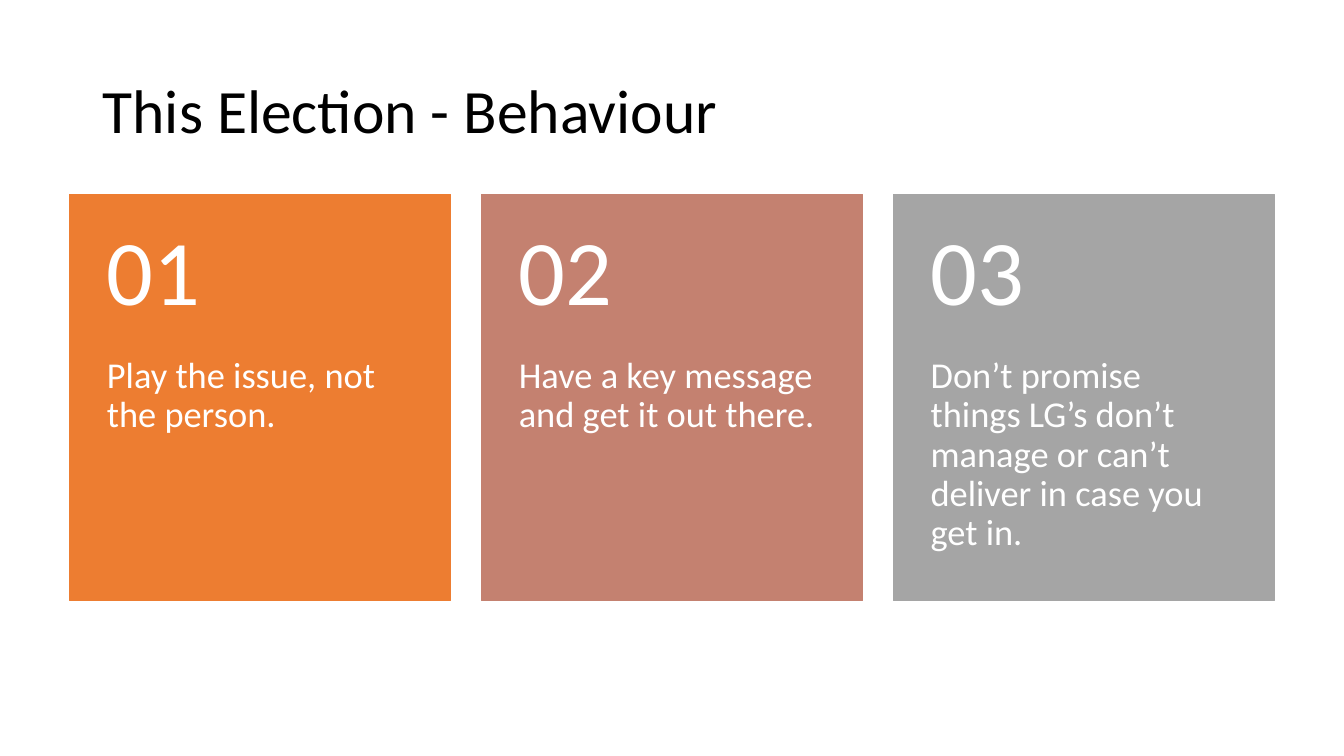
from pptx import Presentation
from pptx.dml.color import RGBColor
from pptx.enum.shapes import MSO_SHAPE as SHAPE
from pptx.enum.text import MSO_ANCHOR as ANCHOR
from pptx.util import Inches, Pt

FONT = "Calibri"
RULES = [
    ("ED7D31", "Play the issue, not the person."),
    ("C48170", "Have a key message and get it out there."),
    ("A5A5A5", "Don’t promise things LG’s don’t manage or can’t deliver in case you get in."),
]


def rgb(value):
    return RGBColor.from_string(value)


def add_text(slide, box, text, size, color, anchor, insets):
    """Place one paragraph in box; insets are left, top, right, bottom."""
    tf = slide.shapes.add_textbox(*map(Inches, box)).text_frame
    tf.word_wrap = True
    tf.vertical_anchor = anchor
    for side, inset in zip(("left", "top", "right", "bottom"), insets):
        setattr(tf, f"margin_{side}", Inches(inset))
    p = tf.paragraphs[0]
    p.line_spacing = 0.9
    r = p.add_run()
    r.text = text
    for name, value in {"name": FONT, "size": Pt(size)}.items():
        setattr(r.font, name, value)
    r.font.color.rgb = rgb(color)


def add_title(slide, box, text):
    add_text(slide, box, text, 44, "000000", ANCHOR.MIDDLE, (0.1, 0.05, 0.1, 0.05))


def add_card(slide, box, number, text, color):
    """Draw a filled card with its number in the top 40% and its text below."""
    left, top, width, height = box
    head = height * 0.4
    sp = slide.shapes.add_shape(SHAPE.RECTANGLE, *map(Inches, box))
    sp.shadow.inherit = False
    sp.fill.solid()
    sp.fill.fore_color.rgb = rgb(color)
    sp.line.color.rgb = rgb(color)
    sp.line.width = Pt(1)
    add_text(slide, (left, top + head, width, height - head), text, 26,
             "FFFFFF", ANCHOR.TOP, (0.37, 0, 0.37, 0.36))
    add_text(slide, (left, top, width, head), f"{number:02d}", 66,
             "FFFFFF", ANCHOR.MIDDLE, (0.37, 0.18, 0.37, 0.18))


def add_cards(slide, box, rules, card_width):
    """Spread one card per rule evenly over the width of box."""
    left, top, width, height = box
    pitch = (width - card_width) / (len(rules) - 1)
    for i, (color, text) in enumerate(rules):
        add_card(slide, (left + i * pitch, top, card_width, height), i + 1, text, color)


def main():
    prs = Presentation()
    prs.slide_width, prs.slide_height = Inches(13.33), Inches(7.5)
    slide = prs.slides.add_slide(prs.slide_layouts[6])
    add_title(slide, (0.92, 0.4, 11.5, 1.45), "This Election - Behaviour")
    add_cards(slide, (0.69, 1.93, 11.95, 4.03), RULES, 3.78)
    prs.save("out.pptx")


if __name__ == "__main__":
    main()
